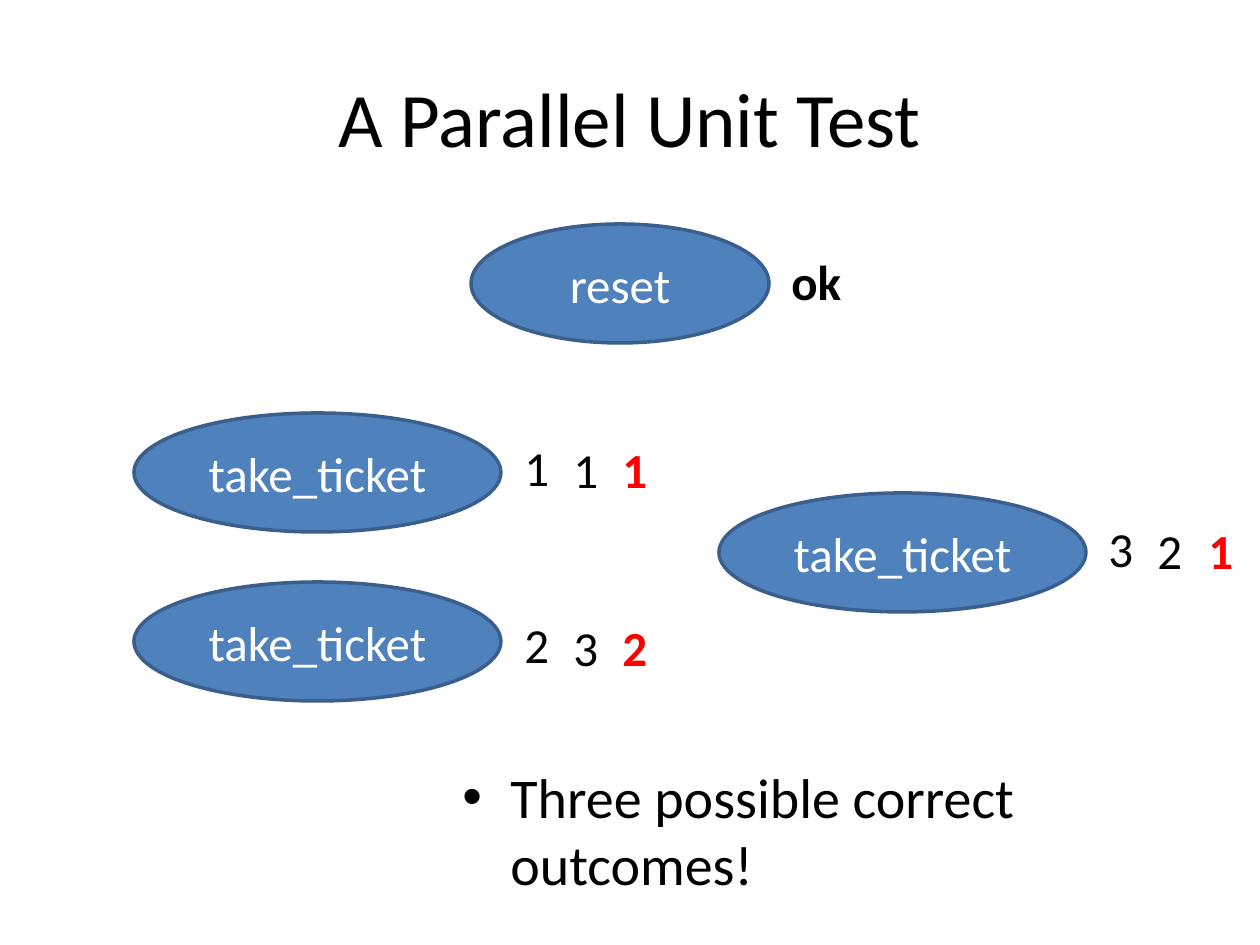
from dataclasses import dataclass

from lxml import etree
from pptx import Presentation
from pptx.dml.color import RGBColor
from pptx.enum.shapes import MSO_SHAPE
from pptx.enum.text import MSO_ANCHOR, PP_ALIGN
from pptx.oxml.ns import qn
from pptx.util import Emu, Pt

ELLIPSE = MSO_SHAPE.OVAL
CENTER, LEFT = PP_ALIGN.CENTER, PP_ALIGN.LEFT
MIDDLE, TOP = MSO_ANCHOR.MIDDLE, MSO_ANCHOR.TOP
EMU_PER_PX = 914400 // 126


@dataclass(frozen=True)
class Theme:
    font: str = "Calibri"
    text: RGBColor = RGBColor(0x00, 0x00, 0x00)
    wrong: RGBColor = RGBColor(0xFF, 0x00, 0x00)
    on_call: RGBColor = RGBColor(0xFF, 0xFF, 0xFF)
    call: RGBColor = RGBColor(0x4F, 0x81, 0xBD)
    call_line: RGBColor = RGBColor(0x3A, 0x5F, 0x8C)
    title_size: int = 44
    body_size: int = 32
    label_size: int = 28
    result_gap: int = 68


THEME = Theme()


def px(*lengths):
    return [Emu(n * EMU_PER_PX) for n in lengths]


def set_text(tf, text, size, color=THEME.text, bold=False, align=LEFT, anchor=TOP):
    tf.text = text
    tf.word_wrap = True
    tf.vertical_anchor = anchor
    for p in tf.paragraphs:
        p.alignment = align
        for r in p.runs:
            r.font.name = THEME.font
            r.font.size = Pt(size)
            r.font.color.rgb = color
            r.font.bold = bold


def add_text(s, box, text, size, **style):
    tf = s.shapes.add_textbox(*px(*box)).text_frame
    set_text(tf, text, size, **style)
    return tf


def add_bullet(p, indent):
    pPr = p._p.get_or_add_pPr()
    pPr.set("marL", str(indent))
    pPr.set("indent", str(-indent))
    etree.SubElement(pPr, qn("a:buFont"), typeface="Arial")
    etree.SubElement(pPr, qn("a:buChar"), char="•")


def add_call(s, box, name):
    sp = s.shapes.add_shape(ELLIPSE, *px(*box))
    sp.shadow.inherit = False
    sp.fill.solid()
    sp.fill.fore_color.rgb = THEME.call
    sp.line.color.rgb = THEME.call_line
    sp.line.width = Pt(2)
    set_text(sp.text_frame, name, THEME.label_size, color=THEME.on_call,
             align=CENTER, anchor=MIDDLE)


def add_outcome(s, lefts, top, left_results, right_result, wrong=False):
    """Place one outcome: the left calls' results stacked, the right call's beside."""
    style = {"color": THEME.wrong if wrong else THEME.text, "bold": wrong}
    left, right = lefts
    tf = add_text(s, (left, top, 69, 251), "\n".join(left_results),
                  THEME.label_size, **style)
    for p in tf.paragraphs[1:]:
        p.space_before = Pt(THEME.result_gap)
    add_text(s, (right, top + 81, 49, 72), right_result, THEME.label_size, **style)


def main():
    prs = Presentation()
    prs.slide_width, prs.slide_height = px(1260, 945)
    s = prs.slides.add_slide(prs.slide_layouts[6])

    add_text(s, (63, 38, 1134, 157), "A Parallel Unit Test", THEME.title_size,
             align=CENTER, anchor=MIDDLE)
    conclusion = add_text(s, (450, 756, 775, 163),
                          "Three possible correct outcomes!", THEME.body_size)
    add_bullet(conclusion.paragraphs[0], *px(48))

    add_call(s, (471, 224, 298, 119), "reset")
    for left, top in ((134, 413), (134, 582), (719, 493)):
        add_call(s, (left, top, 367, 119), "take_ticket")

    add_outcome(s, (512, 1096), 431, "12", "3")
    add_outcome(s, (561, 1145), 433, "13", "2")
    add_outcome(s, (610, 1196), 433, "12", "1", wrong=True)
    add_text(s, (779, 245, 89, 72), "ok", THEME.label_size, bold=True)

    prs.save("out.pptx")


if __name__ == "__main__":
    main()
